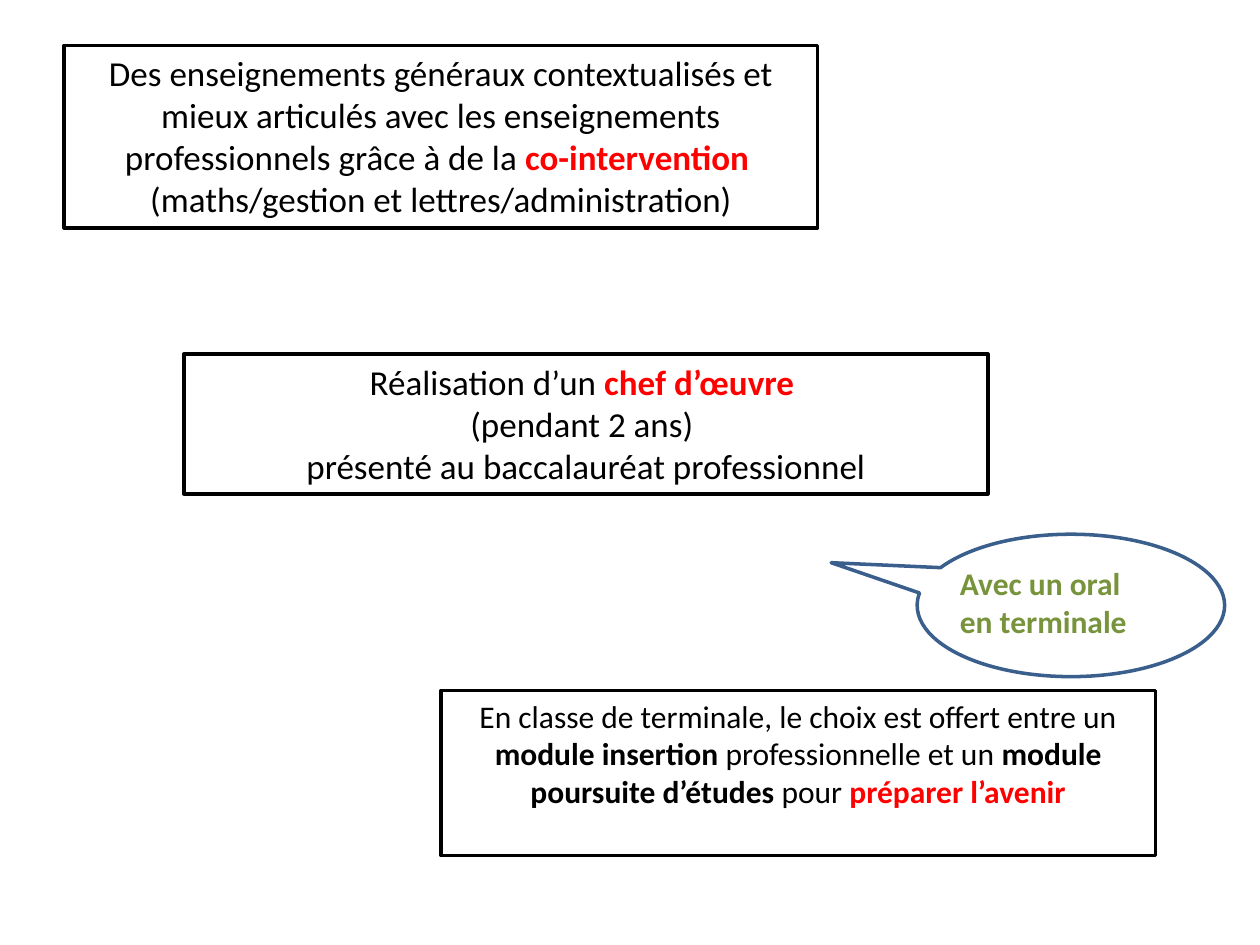
"""Build a slide of three framed statements and a speech bubble."""
from pptx import Presentation
from pptx.dml.color import RGBColor
from pptx.enum.shapes import MSO_SHAPE as Shape
from pptx.enum.text import MSO_ANCHOR as Anchor, PP_ALIGN as Align
from pptx.util import Inches, Pt

BLACK, RED, GREEN, BLUE, WHITE = "000000", "FF0000", "77933C", "3A5F8C", "FFFFFF"
PLAIN, BOLD, KEY, NOTE = (BLACK, False), (BLACK, True), (RED, True), (GREEN, True)

# Areas are left, top, width and height in percent of the slide.
BOXES = [
    ((5.1, 4.8, 59.8, 19.33), 20, [
        [("Des enseignements généraux contextualisés et mieux articulés avec "
          "les enseignements professionnels grâce à de la ", PLAIN),
         ("co-intervention ", KEY)],
        [("(maths/gestion et lettres/administration)", PLAIN)],
    ]),
    ((14.6, 37.47, 63.8, 14.8), 20, [
        [("Réalisation d’un ", PLAIN), ("chef d’œuvre ", KEY)],
        [("(pendant 2 ans) ", PLAIN)],
        [("présenté au baccalauréat professionnel", PLAIN)],
    ]),
    ((35, 73.07, 56.7, 17.47), 18, [
        [("En classe de terminale, le choix est offert entre un ", PLAIN),
         ("module insertion ", BOLD), ("professionnelle et un ", PLAIN),
         ("module poursuite d’études ", BOLD), ("pour ", PLAIN),
         ("préparer l’avenir", KEY)],
    ]),
]
BUBBLE = (72.8, 56.53, 24.4, 15.07)
TAIL = (-0.78, -0.3)
LABEL = (75.2, 59.07, 16.5, 9.47)
ORAL = [[("Avec un oral en terminale", NOTE)]]

deck = Presentation()
deck.slide_width, deck.slide_height = Inches(10), Inches(7.5)
slide = deck.slides.add_slide(deck.slide_layouts[6])


def color(code):
    return RGBColor.from_string(code)


def place(area):
    sides = (deck.slide_width, deck.slide_height) * 2
    return [round(part * side / 100) for part, side in zip(area, sides)]


def draw(kind, area, edge):
    shape = slide.shapes.add_shape(kind, *place(area))
    shape.shadow.inherit = False
    shape.line.color.rgb = color(edge)
    shape.line.width = Pt(2)
    return shape


def write(shape, lines, size, align):
    frame = shape.text_frame
    frame.word_wrap = True
    frame.vertical_anchor = Anchor.TOP
    for row, line in enumerate(lines):
        para = frame.add_paragraph() if row else frame.paragraphs[0]
        para.alignment = align
        for text, (hue, bold) in line:
            run = para.add_run()
            run.text = text
            font = run.font
            font.name, font.size, font.bold = "Calibri", Pt(size), bold
            font.color.rgb = color(hue)


bubble = draw(Shape.OVAL_CALLOUT, BUBBLE, BLUE)
bubble.fill.background()
for spot, value in enumerate(TAIL):
    bubble.adjustments[spot] = value
write(slide.shapes.add_textbox(*place(LABEL)), ORAL, 18, Align.LEFT)

for area, size, lines in BOXES:
    box = draw(Shape.RECTANGLE, area, BLACK)
    box.fill.solid()
    box.fill.fore_color.rgb = color(WHITE)
    write(box, lines, size, Align.CENTER)

deck.save("out.pptx")
